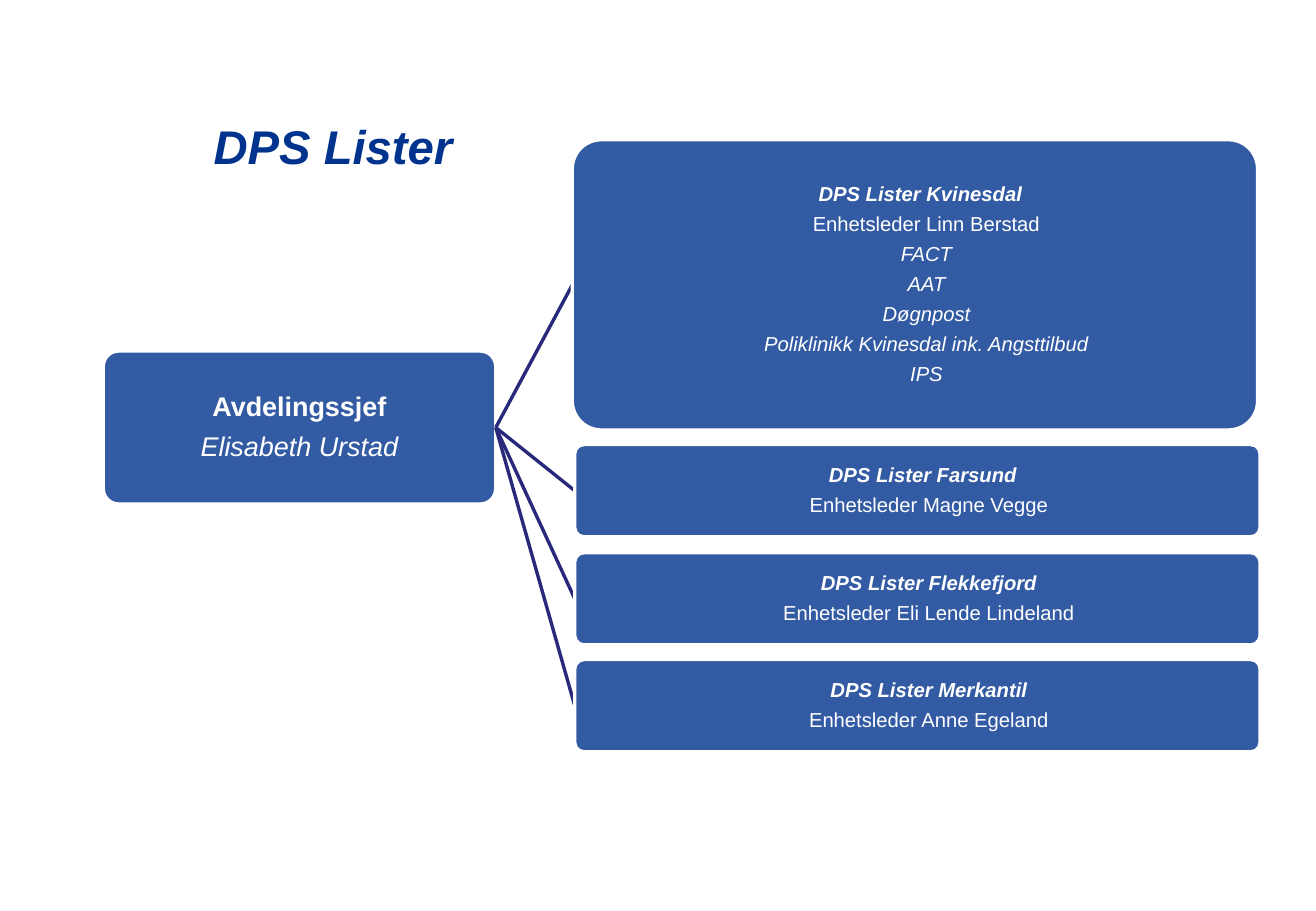
import pptx
import pptx.dml.color
import pptx.enum.shapes
import pptx.enum.text
import pptx.oxml.ns
import pptx.util
import lxml.etree

Inches = pptx.util.Inches
Pt = pptx.util.Pt
RGBColor = pptx.dml.color.RGBColor
qn = pptx.oxml.ns.qn

NAVY = RGBColor(0x00, 0x33, 0x8D)
LINE_BLUE = RGBColor(0x29, 0x29, 0x7B)
WHITE = RGBColor(0xFF, 0xFF, 0xFF)

CHIEF = (0.85, 2.89, 3.23, 1.26)
UNIT_WIDTH = 5.64
UNITS = [
    (4.71, 1.15, 2.39, 0.09, [
        "DPS Lister Kvinesdal", "Enhetsleder Linn Berstad", "FACT", "AAT", "Døgnpost",
        "Poliklinikk Kvinesdal ink. Angsttilbud", "IPS"]),
    (4.73, 3.66, 0.76, 0.09, ["DPS Lister Farsund", "Enhetsleder Magne Vegge"]),
    (4.73, 4.55, 0.76, 0.19, ["DPS Lister Flekkefjord", "Enhetsleder Eli Lende Lindeland"]),
    (4.73, 5.43, 0.76, 0.19, ["DPS Lister Merkantil", "Enhetsleder Anne Egeland"]),
]


def write_line(frame, text, size, color=WHITE, bold=False, italic=False, indent=0, spaced=True):
    para = frame.paragraphs[0]
    if para.runs:
        para = frame.add_paragraph()
    para.alignment = pptx.enum.text.PP_ALIGN.CENTER
    if spaced:
        para.line_spacing = 0.9
        para.space_after = Pt(size * 0.4)
    if indent:
        para._p.get_or_add_pPr().set("marL", str(Inches(indent)))
    span = para.add_run()
    span.text = text
    span.font.name = "Arial"
    span.font.size = Pt(size)
    span.font.bold = bold
    span.font.italic = italic
    span.font.color.rgb = color


def add_box(page, left, top, width, height):
    box = page.shapes.add_shape(
        pptx.enum.shapes.MSO_SHAPE.ROUNDED_RECTANGLE,
        Inches(left), Inches(top), Inches(width), Inches(height))
    box.adjustments[0] = 0.1
    box.shadow.inherit = False
    box.fill.solid()
    box.fill.fore_color.rgb = NAVY
    color = box._element.spPr.find(qn("a:solidFill")).find(qn("a:srgbClr"))
    lxml.etree.SubElement(color, qn("a:alpha")).set("val", "80000")
    box.line.color.rgb = WHITE
    box.line.width = Pt(2)
    frame = box.text_frame
    frame.word_wrap = True
    frame.vertical_anchor = pptx.enum.text.MSO_ANCHOR.MIDDLE
    frame.margin_left = frame.margin_right = Inches(0.04)
    frame.margin_top = frame.margin_bottom = Inches(0.04)
    return frame


deck = pptx.Presentation()
deck.slide_width = Inches(10.83)
deck.slide_height = Inches(7.5)
page = deck.slides.add_slide(deck.slide_layouts[6])

chief_frame = add_box(page, *CHIEF)
write_line(chief_frame, "Avdelingssjef", 16, bold=True)
write_line(chief_frame, "Elisabeth Urstad", 16, italic=True)

for left, top, height, heading_indent, lines in UNITS:
    link = page.shapes.add_connector(
        pptx.enum.shapes.MSO_CONNECTOR.STRAIGHT,
        Inches(CHIEF[0] + CHIEF[2]), Inches(CHIEF[1] + CHIEF[3] / 2),
        Inches(left), Inches(top + height / 2))
    link.line.color.rgb = LINE_BLUE
    link.line.width = Pt(2)
    lxml.etree.SubElement(link._element.spPr, qn("a:effectLst"))

    unit_frame = add_box(page, left, top, UNIT_WIDTH, height)
    for index, text in enumerate(lines):
        write_line(unit_frame, text, 12, bold=index == 0, italic=index != 1,
                   indent=heading_indent if index == 0 else 0.19)

title = page.shapes.add_textbox(Inches(0.93), Inches(0.92), Inches(3.62), Inches(1.18))
title.text_frame.word_wrap = True
write_line(title.text_frame, "DPS Lister", 28, color=NAVY, bold=True, italic=True, spaced=False)

deck.save("out.pptx")
